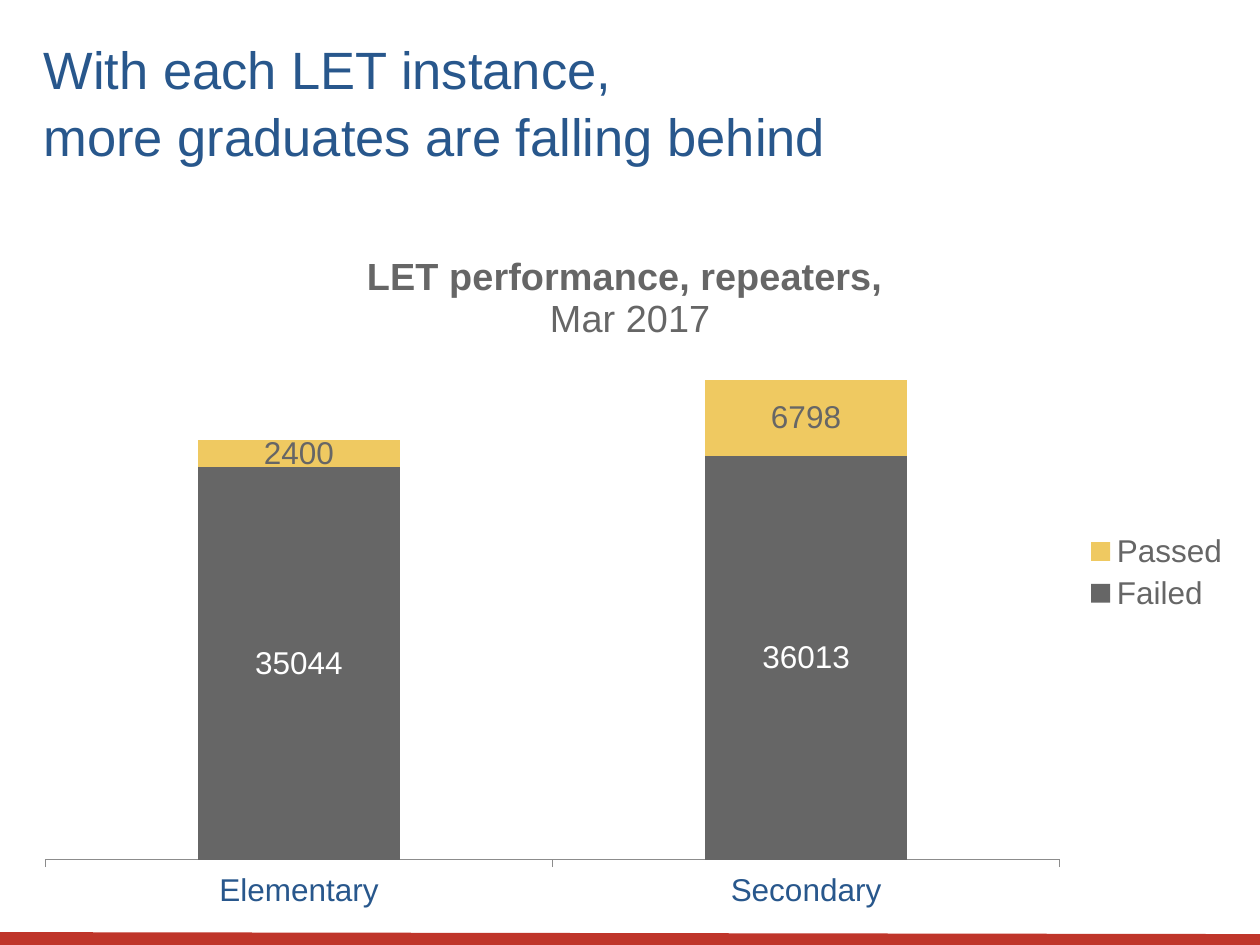
from lxml import etree
from pptx import Presentation
from pptx.chart.data import CategoryChartData
from pptx.dml.color import RGBColor
from pptx.enum.chart import XL_CHART_TYPE, XL_LABEL_POSITION, XL_LEGEND_POSITION, XL_TICK_MARK
from pptx.enum.shapes import MSO_CONNECTOR
from pptx.enum.text import MSO_ANCHOR, MSO_AUTO_SIZE, PP_ALIGN
from pptx.oxml import parse_xml
from pptx.oxml.ns import nsdecls, qn
from pptx.util import Pt

STACKED = XL_CHART_TYPE.COLUMN_STACKED
CENTER_LABEL = XL_LABEL_POSITION.CENTER
LEGEND_RIGHT = XL_LEGEND_POSITION.RIGHT
TICK_OUTSIDE = XL_TICK_MARK.OUTSIDE
STRAIGHT = MSO_CONNECTOR.STRAIGHT
TOP = MSO_ANCHOR.TOP
NO_AUTOFIT = MSO_AUTO_SIZE.NONE
LEFT = PP_ALIGN.LEFT

BLUE = RGBColor(0x28, 0x57, 0x8C)
RED = RGBColor(0xBF, 0x35, 0x2A)
GRAY = RGBColor(0x66, 0x66, 0x66)
AXIS_GRAY = RGBColor(0x8C, 0x8C, 0x8C)
YELLOW = RGBColor(0xEF, 0xC9, 0x61)
WHITE = RGBColor(0xFF, 0xFF, 0xFF)

FONT = "Arial"
EMU_PER_PX = 914400 / 126
TITLE_ONLY = 5


def px(length):
    return round(length * EMU_PER_PX)


def set_font(font, size, color, bold=False):
    font.name = FONT
    font.size = Pt(size)
    font.bold = bold
    font.color.rgb = color


def place_in_chart(element, **fractions):
    for layout in element.findall(qn("c:layout")):
        element.remove(layout)
    target = '<c:layoutTarget val="inner"/>' if "w" in fractions else ""
    modes = "".join(f'<c:{key}Mode val="edge"/>' for key in "xy")
    sizes = "".join(f'<c:{key} val="{value}"/>' for key, value in fractions.items())
    element.insert(0, parse_xml(
        f'<c:layout {nsdecls("c")}><c:manualLayout>{target}{modes}{sizes}'
        "</c:manualLayout></c:layout>"))


class SlideBuilder:
    def __init__(self, deck):
        self.slide = deck.slides.add_slide(deck.slide_layouts[TITLE_ONLY])
        background = self.slide.background.fill
        background.solid()
        background.fore_color.rgb = WHITE

    def title(self, text, left, top, width, height):
        box = self.slide.shapes.title
        box.left, box.top, box.width, box.height = map(px, (left, top, width, height))
        frame = box.text_frame
        frame.text = text
        frame.word_wrap = True
        frame.auto_size = NO_AUTOFIT
        frame.vertical_anchor = TOP
        for para in frame.paragraphs:
            para.alignment = LEFT
            para.line_spacing = 1.05
            for span in para.runs:
                set_font(span.font, 30, BLUE)

    def line(self, start, end, color, weight):
        rule = self.slide.shapes.add_connector(STRAIGHT, *map(px, start + end))
        rule.line.color.rgb = color
        rule.line.width = Pt(weight)
        etree.SubElement(rule._element.spPr, qn("a:effectLst"))

    def stacked_chart(self, heading, categories, series_styles, left, top, width, height):
        data = CategoryChartData()
        data.categories = categories
        for name, values, _, _ in series_styles:
            data.add_series(name, values)
        frame = self.slide.shapes.add_chart(STACKED, *map(px, (left, top, width, height)), data)
        chart = frame.chart
        set_font(chart.font, 18, GRAY)
        self.chart_heading(chart, heading)
        self.chart_axes(chart)
        chart.has_legend = True
        chart.legend.position = LEGEND_RIGHT
        chart.legend.include_in_layout = False
        set_font(chart.legend.font, 18, GRAY)
        plot = chart.plots[0]
        plot.gap_width = 150
        plot.overlap = 100
        plot.vary_by_categories = False
        for series, (_, _, fill, label_color) in zip(plot.series, series_styles):
            series.format.fill.solid()
            series.format.fill.fore_color.rgb = fill
            labels = series.data_labels
            labels.show_value = True
            labels.position = CENTER_LABEL
            set_font(labels.font, 18, label_color)
        plot_area = chart._chartSpace.chart.plotArea
        place_in_chart(plot_area, x=0.02, y=0.19, w=0.83, h=0.72)

    def chart_heading(self, chart, heading):
        chart.has_title = True
        title = chart.chart_title
        place_in_chart(title._element, x=0.28, y=0.04)
        title.text_frame.text = heading
        title.include_in_layout = False
        for index, para in enumerate(title.text_frame.paragraphs):
            for span in para.runs:
                set_font(span.font, 21.6, GRAY, bold=index == 0)

    def chart_axes(self, chart):
        values = chart.value_axis
        values.visible = False
        values.has_major_gridlines = False
        values.minimum_scale = 0
        values.maximum_scale = 45000
        axis = chart.category_axis
        axis.major_tick_mark = TICK_OUTSIDE
        axis.format.line.color.rgb = AXIS_GRAY
        set_font(axis.tick_labels.font, 18, BLUE)


def main():
    deck = Presentation()
    deck.slide_width, deck.slide_height = px(1260), px(945)
    page = SlideBuilder(deck)
    page.title("With each LET instance,\nmore graduates are falling behind", 31, 28, 1212, 195)
    page.line((-1, 940), (1261, 942), RED, 9)
    page.stacked_chart(
        "LET performance, repeaters, \nMar 2017",
        ["Elementary", "Secondary"],
        [
            ("Failed", (35044, 36013), GRAY, WHITE),
            ("Passed", (2400, 6798), YELLOW, GRAY),
        ],
        21, 222, 1222, 701)
    deck.save("out.pptx")


if __name__ == "__main__":
    main()
